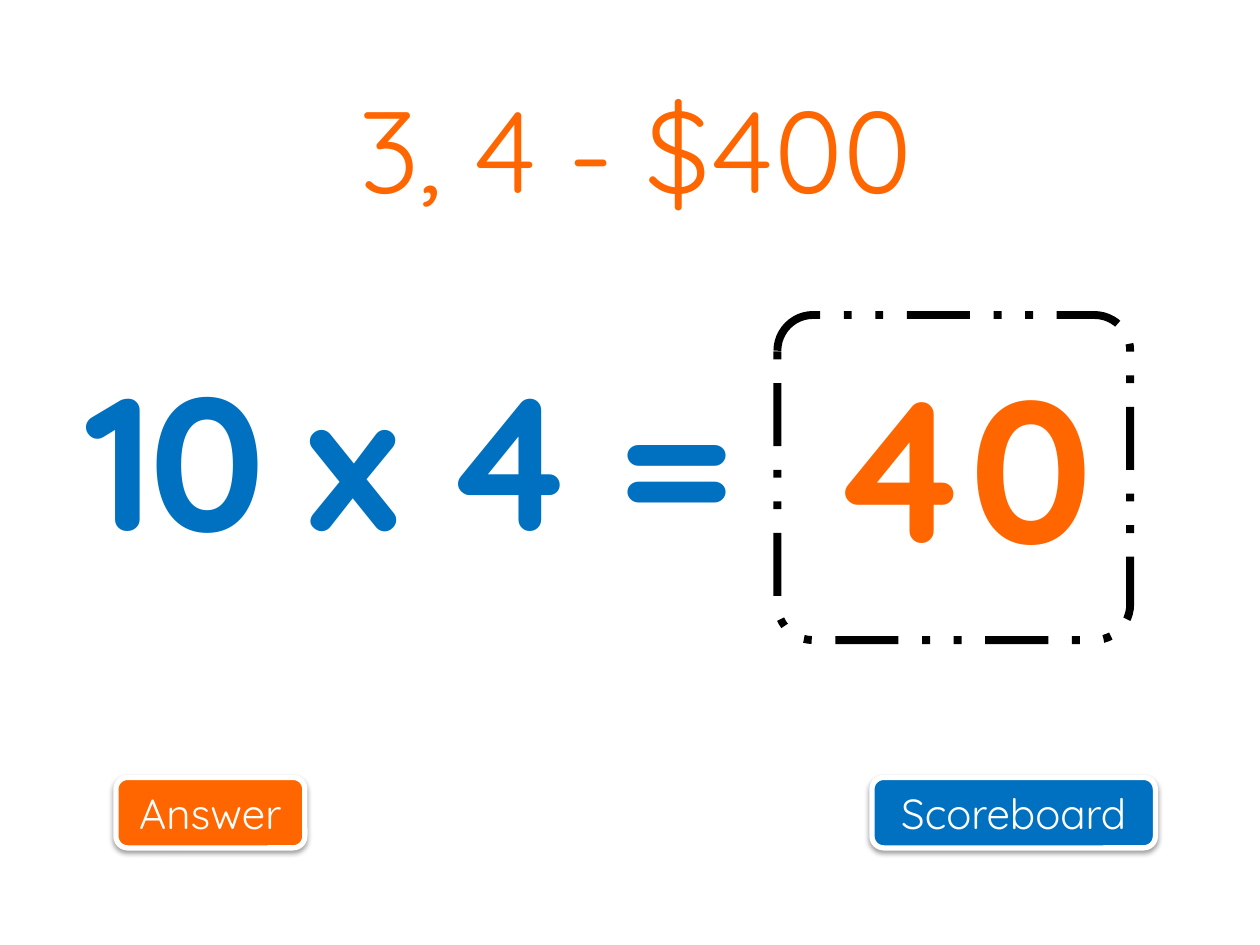
from lxml import etree
from pptx import Presentation
from pptx.dml.color import RGBColor
from pptx.enum import dml, shapes, text
from pptx.oxml.ns import qn
from pptx.util import Inches, Pt

ORANGE, BLUE, WHITE, BLACK = "FF6600", "0070C0", "FFFFFF", "000000"


def colour(value):
    return RGBColor.from_string(value)


def write(frame, words, color, align=text.PP_ALIGN.CENTER, **font_format):
    frame.word_wrap = True
    paragraph = frame.paragraphs[0]
    paragraph.alignment = align
    run = paragraph.add_run()
    run.text = words
    run.font.color.rgb = colour(color)
    for name, value in {"name": "Quicksand", **font_format}.items():
        setattr(run.font, name, value)
    return run


def add_title(slide, words):
    title = slide.shapes.title
    place = {"left": 0.92, "top": 0.67, "width": 8.25, "height": 1}
    for name, value in place.items():
        setattr(title, name, Inches(value))
    title.text_frame.vertical_anchor = text.MSO_ANCHOR.MIDDLE
    write(title.text_frame, words, ORANGE, size=Pt(66), bold=False)


def add_rounded_box(slide, left, top, width, height, fill, line, weight):
    box = slide.shapes.add_shape(
        shapes.MSO_SHAPE.ROUNDED_RECTANGLE,
        Inches(left), Inches(top), Inches(width), Inches(height))
    box.shadow.inherit = False
    box.fill.solid()
    box.fill.fore_color.rgb = colour(fill)
    box.line.color.rgb = colour(line)
    box.line.width = Pt(weight)
    return box


def add_soft_shadow(shape):
    """Fill the shape's empty effect list with a shadow that falls straight down."""
    effects = shape._element.spPr.find(qn("a:effectLst"))
    shadow = etree.SubElement(
        effects, qn("a:outerShdw"), blurRad=str(Pt(3.1)), dist=str(Pt(1.6)),
        dir="5400000", rotWithShape="0")
    tint = etree.SubElement(shadow, qn("a:srgbClr"), val=BLACK)
    etree.SubElement(tint, qn("a:alpha"), val="38000")


def add_button(slide, label, left, width, fill):
    button = add_rounded_box(slide, left, 6.17, width, 0.56, fill, WHITE, 3)
    add_soft_shadow(button)
    button.text_frame.vertical_anchor = text.MSO_ANCHOR.MIDDLE
    write(button.text_frame, label, WHITE, size=Pt(24))


def add_big_text(slide, words, left, width, color, size, align, inset=0.1):
    box = slide.shapes.add_textbox(
        Inches(left), Inches(2.67), Inches(width), Inches(2.33))
    box.text_frame.margin_left = Inches(inset)
    return write(box.text_frame, words, color, align, size=Pt(size), bold=True)


def add_answer_frame(slide):
    frame = add_rounded_box(slide, 6.17, 2.5, 2.8, 2.58, WHITE, BLACK, 4.5)
    frame.adjustments[0] = 0.11
    frame.line.dash_style = dml.MSO_LINE.DASH_DOT_DOT


def main():
    deck = Presentation()
    deck.slide_width, deck.slide_height = Inches(10), Inches(7.5)
    slide = deck.slides.add_slide(deck.slide_layouts[5])

    add_button(slide, "Answer", 0.92, 1.5, ORANGE)
    add_button(slide, "Scoreboard", 6.92, 2.25, BLUE)
    add_title(slide, "3, 4 - $400")
    question = add_big_text(slide, "10 x 4 =", 0.25, 6.92, BLUE, 108,
                            text.PP_ALIGN.LEFT, inset=0.43)
    question.font._element.set("spc", "-300")
    add_answer_frame(slide)
    add_big_text(slide, "40", 6.08, 3.08, ORANGE, 115, text.PP_ALIGN.CENTER)

    deck.save("out.pptx")


if __name__ == "__main__":
    main()
